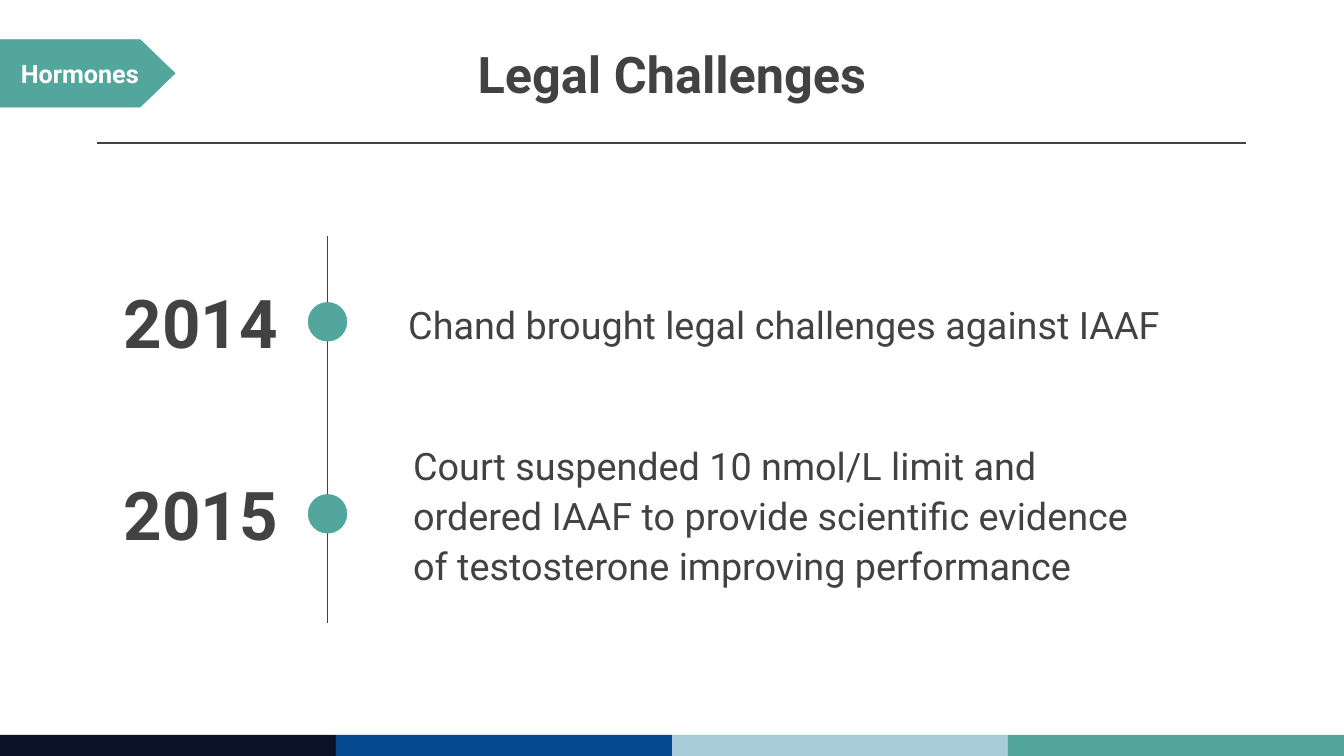
"""Build the Legal Challenges timeline slide."""
from lxml.etree import SubElement
from pptx import Presentation
from pptx.dml.color import RGBColor as Color
from pptx.enum.shapes import MSO_CONNECTOR as Connector, MSO_SHAPE as Shape
from pptx.enum.text import MSO_ANCHOR as Anchor, MSO_AUTO_SIZE as AutoSize, PP_ALIGN as Align
from pptx.oxml.ns import qn
from pptx.util import Inches, Pt

COLORS = {
    "text": "424242",
    "white": "FFFFFF",
    "navy": "0B132B",
    "blue": "054A91",
    "sky": "A9CCDB",
    "teal": "53A69C",
}
WIDTH, HEIGHT = 26.67, 15
AXIS_X, DOT_SIZE = 6.5, 0.77


def color_of(name):
    return Color.from_string(COLORS[name])


def write_text(shape, text, *, size, color="text", bold=False, align=Align.LEFT,
               anchor=Anchor.TOP, inset=0.1, line_spacing=1.0, space_before=0):
    frame = shape.text_frame
    frame.word_wrap = True
    frame.auto_size = AutoSize.NONE
    frame.vertical_anchor = anchor
    frame.margin_left = frame.margin_right = Inches(inset)
    frame.margin_top = frame.margin_bottom = Inches(inset)
    paragraph = frame.paragraphs[0]
    paragraph.alignment = align
    paragraph.line_spacing = line_spacing
    paragraph.space_before = Pt(space_before)
    run = paragraph.add_run()
    run.text = text
    run.font.name = "Roboto"
    run.font.size = Pt(size)
    run.font.bold = bold
    run.font.color.rgb = color_of(color)
    return paragraph


class SlideBuilder:
    def __init__(self, slide):
        self.slide = slide

    def placeholder(self, index, box, text, **style):
        shape = self.slide.placeholders[index]
        shape.left, shape.top, shape.width, shape.height = map(Inches, box)
        return write_text(shape, text, inset=0, anchor=Anchor.MIDDLE, **style)

    def title(self, box, text):
        self.placeholder(0, box, text, size=72, bold=True, align=Align.CENTER, line_spacing=0.8)

    def body(self, box, text, **style):
        paragraph = self.placeholder(1, box, text, **style)
        properties = paragraph._p.get_or_add_pPr()
        properties.set("marL", "0")
        properties.set("indent", "0")
        SubElement(properties, qn("a:buNone"))

    def text(self, box, text, **style):
        write_text(self.slide.shapes.add_textbox(*map(Inches, box)), text, **style)

    def shape(self, kind, box, color, outlined=False, rotation=0):
        shape = self.slide.shapes.add_shape(kind, *map(Inches, box))
        shape.shadow.inherit = False
        shape.rotation = rotation
        shape.fill.solid()
        shape.fill.fore_color.rgb = color_of(color)
        if outlined:
            shape.line.color.rgb = color_of(color)
            shape.line.width = Pt(0.75)
        else:
            shape.line.fill.background()

    def line(self, start, end, width):
        line = self.slide.shapes.add_connector(Connector.STRAIGHT, *map(Inches, start + end))
        line.line.color.rgb = color_of("text")
        line.line.width = Pt(width)
        SubElement(line._element.spPr, qn("a:effectLst"))


def main():
    presentation = Presentation()
    presentation.slide_width, presentation.slide_height = Inches(WIDTH), Inches(HEIGHT)
    builder = SlideBuilder(presentation.slides.add_slide(presentation.slide_layouts[1]))

    builder.line((1.92, 2.83), (24.72, 2.83), 3)
    bands = ("navy", "blue", "sky", "teal")
    band_width = WIDTH / len(bands)
    for index, color in enumerate(bands):
        builder.shape(Shape.RECTANGLE, (index * band_width, 14.58, band_width, 0.42), color)

    builder.title((5.09, 0.49, 16.49, 2.15), "Legal Challenges")
    builder.shape(Shape.FLOWCHART_OFFPAGE_CONNECTOR, (1.07, -0.28, 1.34, 3.47), "teal",
                  outlined=True, rotation=270)
    builder.text((0.23, 1.05, 2.71, 0.81), "Hormones", size=36, color="white", bold=True,
                 align=Align.CENTER, anchor=Anchor.MIDDLE)

    event_style = {"size": 54, "line_spacing": 1.1, "space_before": 26}
    builder.body((8.1, 5.6, 16.49, 1.59), "Chand brought legal challenges against IAAF",
                 **event_style)
    builder.text((8.1, 8.6, 14.9, 3.11),
                 "Court suspended 10 nmol/L limit and ordered IAAF to provide scientific "
                 "evidence of testosterone improving performance", **event_style)

    builder.line((AXIS_X, 4.69), (AXIS_X, 12.36), 2.25)
    for year, top in (("2014", 5.48), ("2015", 9.29)):
        builder.text((2.36, top, 3.29, 1.82), year, size=96, bold=True)
        builder.shape(Shape.OVAL, (AXIS_X - DOT_SIZE / 2, top + 0.52, DOT_SIZE, DOT_SIZE),
                      "teal", outlined=True)

    presentation.save("out.pptx")


if __name__ == "__main__":
    main()
